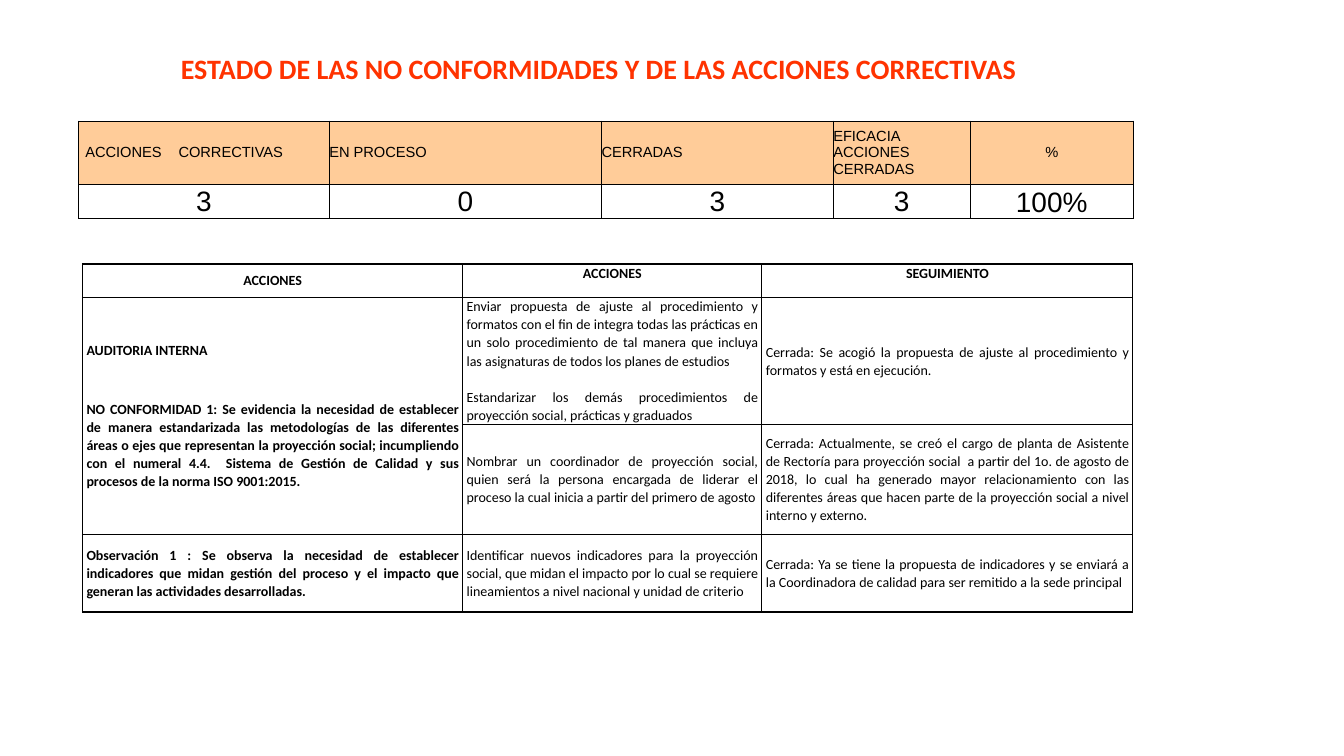
import pptx
import pptx.util
import pptx.dml.color
import pptx.enum.text
import pptx.oxml
import pptx.oxml.ns
import lxml.etree

Cm, Pt = pptx.util.Cm, pptx.util.Pt
Color = pptx.dml.color.RGBColor
Align = pptx.enum.text.PP_ALIGN
Anchor = pptx.enum.text.MSO_ANCHOR
tag = pptx.oxml.ns.qn

BLACK = Color(0x00, 0x00, 0x00)
WHITE = Color(0xFF, 0xFF, 0xFF)
PEACH = Color(0xFF, 0xCC, 0x99)
ORANGE = Color(0xFF, 0x33, 0x00)

TITLE = "ESTADO DE LAS NO CONFORMIDADES Y DE LAS ACCIONES CORRECTIVAS"

TOTALS = [
    ["ACCIONES\tCORRECTIVAS", "EN PROCESO", "CERRADAS",
     "EFICACIA ACCIONES CERRADAS", "%"],
    ["3", "0", "3", "3", "100%"],
]

ACTIONS = [
    ["ACCIONES", "ACCIONES", "SEGUIMIENTO"],
    ["AUDITORIA INTERNA\n"
     "NO CONFORMIDAD 1: Se evidencia la necesidad de establecer de manera "
     "estandarizada las metodologías de las diferentes áreas o ejes que "
     "representan la proyección social; incumpliendo con el numeral 4.4.  "
     "Sistema de Gestión de Calidad y sus procesos de la norma ISO 9001:2015.",
     "Enviar propuesta de ajuste al procedimiento y formatos con el fin de "
     "integra todas las prácticas en un solo procedimiento de tal manera que "
     "incluya las asignaturas de todos los planes de estudios\n"
     "Estandarizar los demás procedimientos de proyección social, prácticas "
     "y graduados",
     "Cerrada: Se acogió la propuesta de ajuste al procedimiento y formatos "
     "y está en ejecución."],
    ["",
     "Nombrar un coordinador de proyección social, quien será la persona "
     "encargada de liderar el proceso la cual inicia a partir del primero "
     "de agosto",
     "Cerrada: Actualmente, se creó el cargo de planta de Asistente de "
     "Rectoría para proyección social  a partir del 1o. de agosto de 2018, "
     "lo cual ha generado mayor relacionamiento con las diferentes áreas que "
     "hacen parte de la proyección social a nivel interno y externo."],
    ["Observación 1 : Se observa la necesidad de establecer indicadores que "
     "midan gestión del proceso y el impacto que generan las actividades "
     "desarrolladas.",
     "Identificar nuevos indicadores para la proyección social, que midan el "
     "impacto por lo cual se requiere lineamientos a nivel nacional y unidad "
     "de criterio",
     "Cerrada: Ya se tiene la propuesta de indicadores y se enviará a la "
     "Coordinadora de calidad para ser remitido a la sede principal"],
]


def write(frame, text, size=10, font="Calibri", color=BLACK, bold=False,
          align=Align.JUSTIFY, lines=1.0, gap=0, tab=None):
    parts = text.split("\n")
    for i, part in enumerate(parts):
        para = frame.paragraphs[0] if i == 0 else frame.add_paragraph()
        para.alignment = align
        para.line_spacing = lines
        para.space_after = Pt(gap if i < len(parts) - 1 else 0)
        if tab:
            stops = lxml.etree.SubElement(
                para._p.get_or_add_pPr(), tag("a:tabLst"))
            lxml.etree.SubElement(
                stops, tag("a:tab"), pos=str(tab), algn="l")
        run = para.add_run()
        run.text = part
        run.font.size = Pt(size)
        run.font.name = font
        run.font.bold = bold
        run.font.color.rgb = color


def frame_cell(cell, width):
    props = cell._tc.get_or_add_tcPr()
    for side in ("lnL", "lnR", "lnT", "lnB"):
        line = lxml.etree.SubElement(
            props, tag("a:" + side), w=str(Pt(width)))
        fill = lxml.etree.SubElement(line, tag("a:solidFill"))
        lxml.etree.SubElement(fill, tag("a:srgbClr"), val=str(BLACK))


def grid(slide, left, top, cols, rows, width, inset):
    shape = slide.shapes.add_table(
        len(rows), len(cols), Cm(left), Cm(top), Cm(sum(cols)), Cm(sum(rows)))
    table = shape.table
    table.first_row = table.horz_banding = False
    for col, size in zip(table.columns, cols):
        col.width = Cm(size)
    for row, size in zip(table.rows, rows):
        row.height = Cm(size)
    for cell in table.iter_cells():
        frame_cell(cell, width)
        cell.fill.solid()
        cell.fill.fore_color.rgb = WHITE
        cell.margin_left = cell.margin_right = Cm(inset)
        cell.margin_top = cell.margin_bottom = 0
        cell.vertical_anchor = Anchor.MIDDLE
    return table


def add_title(slide):
    box = slide.shapes.add_textbox(Cm(3.66), Cm(0.69), Cm(22.86), Cm(1.6))
    frame = box.text_frame
    frame.word_wrap = True
    frame.vertical_anchor = Anchor.BOTTOM
    write(frame, TITLE, size=20, color=ORANGE, bold=True,
          align=Align.CENTER, lines=0.9)


def add_totals(slide):
    table = grid(slide, 1.98, 3.05, [6.32, 6.86, 5.84, 3.45, 4.11],
                 [1.6, 0.79], 0.5, 0)
    for r, row in enumerate(TOTALS):
        for c, text in enumerate(row):
            cell = table.cell(r, c)
            head = r == 0
            if head:
                cell.fill.fore_color.rgb = PEACH
            mid = not head or text == "%"
            write(cell.text_frame, text, size=10.5 if head else 20,
                  font="Arial", align=Align.CENTER if mid else Align.LEFT,
                  tab=Cm(2.35) if "\t" in text else None)
    table.cell(0, 0).margin_left = Cm(0.17)
    table.cell(1, 4).vertical_anchor = Anchor.BOTTOM


def add_actions(slide):
    table = grid(slide, 2.08, 6.65, [9.58, 7.54, 9.35],
                 [0.84, 3.2, 2.77, 1.96], 1, 0.1)
    table.cell(1, 0).merge(table.cell(2, 0))
    for r, row in enumerate(ACTIONS):
        for c, text in enumerate(row):
            cell = table.cell(r, c)
            if cell.is_spanned:
                continue
            head = r == 0
            if head and c > 0:
                cell.vertical_anchor = Anchor.TOP
            write(cell.text_frame, text, bold=head or c == 0,
                  align=Align.CENTER if head else Align.JUSTIFY,
                  lines=1.07, gap=29 if c == 0 else 13)


def main():
    deck = pptx.Presentation()
    deck.slide_width, deck.slide_height = Cm(33.87), Cm(19.05)
    slide = deck.slides.add_slide(deck.slide_layouts[6])
    add_actions(slide)
    add_title(slide)
    add_totals(slide)
    deck.save("out.pptx")


if __name__ == "__main__":
    main()
